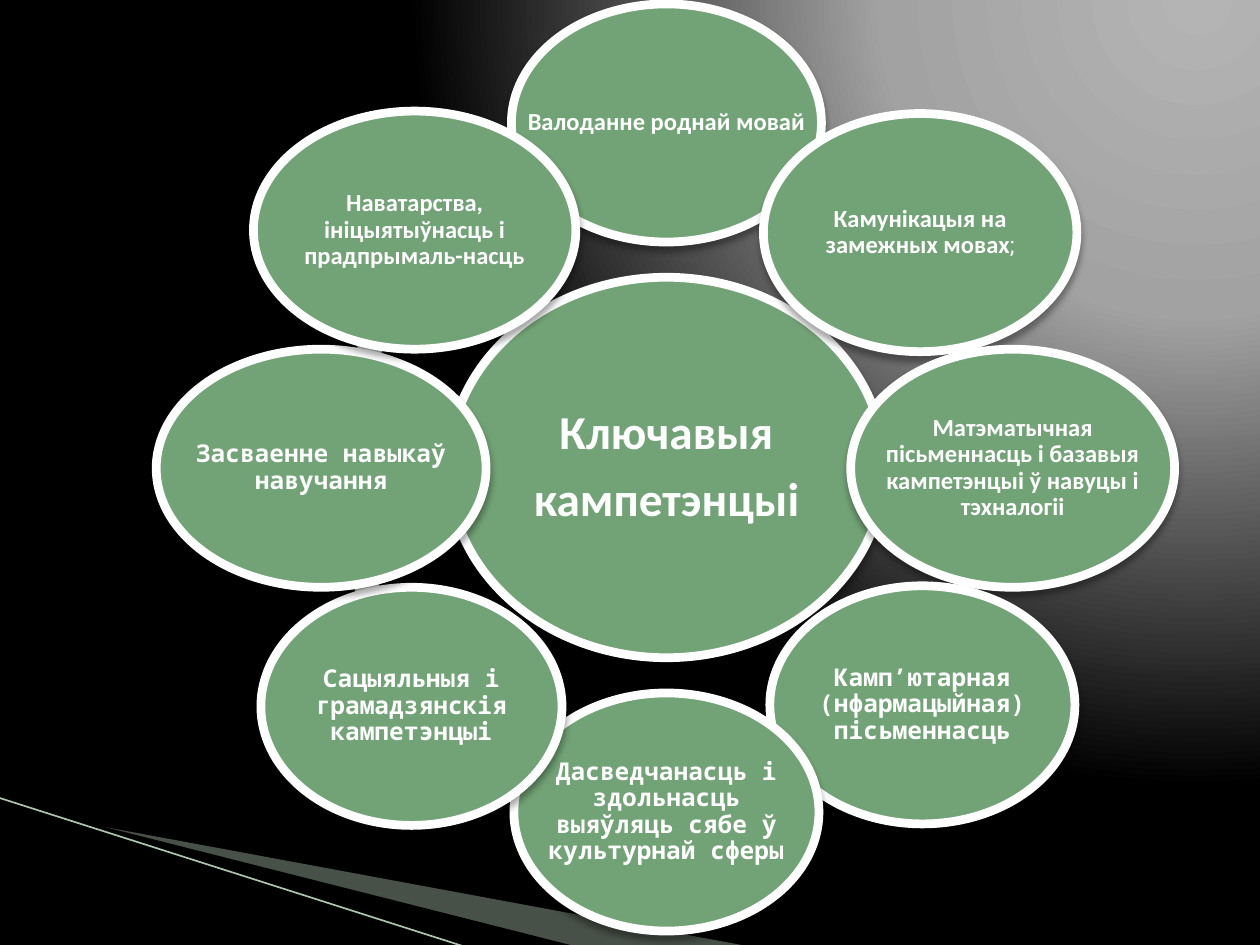
from typing import NamedTuple

from lxml import etree
from pptx import Presentation
from pptx.dml.color import RGBColor
from pptx.enum.shapes import MSO_CONNECTOR, MSO_SHAPE
from pptx.enum.text import MSO_ANCHOR, PP_ALIGN
from pptx.oxml import parse_xml
from pptx.oxml.ns import nsdecls, qn
from pptx.util import Cm, Pt

ELLIPSE, BLOCK_ARC = MSO_SHAPE.OVAL, MSO_SHAPE.BLOCK_ARC
STRAIGHT = MSO_CONNECTOR.STRAIGHT
CENTER, MIDDLE = PP_ALIGN.CENTER, MSO_ANCHOR.MIDDLE

GREEN, PALE_GREEN, WHITE, BLACK = "72A376", "BCCEBD", "FFFFFF", "000000"
SANS, MONO = "Calibri", "Noto Sans Mono"
PETAL_HEIGHT = 4.8
ARC_SIZE = 61.87
ARC_THICKNESS = 0.008


class Bubble(NamedTuple):
    left: float
    top: float
    width: float
    text: str
    font: str = SANS
    height: float = PETAL_HEIGHT
    size: float = 14
    inset: float = 0.28


class Arc(NamedTuple):
    left: float
    top: float
    start: float
    end: float


class Wedge(NamedTuple):
    points: list[tuple[float, float]]
    color: str
    opacity: int


BUBBLES = [
    Bubble(9.04, 5.59, 8.79, "Ключавыя\nкампетэнцыі", height=7.67, size=27, inset=0),
    Bubble(10.31, 0.08, 6.25, "Валоданне роднай мовай"),
    Bubble(15.39, 2.29, 6.32, "Камунікацыя на замежных мовах;"),
    Bubble(17.15, 7.04, 6.53,
           "Матэматычная пісьменнасць і базавыя кампетэнцыі ў навуцы і тэхналогіі"),
    Bubble(15.52, 11.81, 6.15, "Камп’ютарная (нфармацыйная) пісьменнасць", MONO),
    Bubble(10.36, 13.97, 6.15,
           "Дасведчанасць і здольнасць выяўляць сябе ў культурнай сферы", MONO),
    Bubble(5.26, 11.84, 6.07, "Сацыяльныя і грамадзянскія кампетэнцыі", MONO),
    Bubble(3.15, 7.04, 6.65, "Засваенне навыкаў навучання", MONO),
    Bubble(5.11, 2.24, 6.5, "Наватарства, ініцыятыўнасць і прадпрымаль-насць"),
]
ARCS = [
    Arc(-8.03, 0.86, 145.08, 151.25),
    Arc(5.11, -12.75, 117.9, 123.63),
    Arc(5.18, -29.92, 92.73, 98.49),
    Arc(-8.33, -43.99, 64.38, 70.58),
    Arc(-26.77, -43.94, 37.25, 43.5),
    Arc(-40.13, -30.02, 9.64, 15.35),
    Arc(-40.03, -12.65, 200.29, 205.97),
    Arc(-27.08, 0.84, 172.86, 179.09),
]
WEDGES = [
    Wedge([(1.4, 16.54), (15.11, 19.08), (11.58, 19.08), (1.4, 16.51)], "B3CBB5", 40),
    Wedge([(1.35, 16.48), (11.61, 19.08), (9.45, 19.1), (1.37, 16.51)], BLACK, 100),
]


def rgb(color: str) -> RGBColor:
    return RGBColor.from_string(color)


def fill_solid(shape, color: str) -> None:
    shape.fill.solid()
    shape.fill.fore_color.rgb = rgb(color)


def set_background(slide) -> None:
    stops = "".join(
        f'<a:gs pos="{position * 1000}"><a:srgbClr val="{color}"/></a:gs>'
        for position, color in ((0, "B4B4B4"), (40, "A2A2A2"), (100, BLACK)))
    slide.element.cSld.insert(0, parse_xml(
        f'<p:bg {nsdecls("p", "a")}><p:bgPr><a:gradFill rotWithShape="1">'
        f'<a:gsLst>{stops}</a:gsLst><a:path path="circle">'
        '<a:fillToRect l="130000" t="-95000" r="40000" b="218000"/></a:path>'
        '</a:gradFill><a:effectLst/></p:bgPr></p:bg>'))


def add_shadow(shape) -> None:
    shape.shadow.inherit = False
    shape.element.spPr.find(qn("a:effectLst")).append(parse_xml(
        f'<a:outerShdw {nsdecls("a")} blurRad="{Pt(4)}" dist="{Pt(3)}" dir="5400000" '
        f'rotWithShape="0"><a:srgbClr val="{BLACK}"><a:alpha val="35000"/></a:srgbClr>'
        '</a:outerShdw>'))


def add_wedge(slide, wedge: Wedge) -> None:
    points = [(Cm(x), Cm(y)) for x, y in wedge.points]
    builder = slide.shapes.build_freeform(*points[0], scale=1.0)
    builder.add_line_segments(points[1:], close=True)
    shape = builder.convert_to_shape()
    shape.shadow.inherit = False
    shape.line.fill.background()
    fill_solid(shape, wedge.color)
    color = shape.element.spPr.find(qn("a:solidFill")).find(qn("a:srgbClr"))
    etree.SubElement(color, qn("a:alpha")).set("val", str(wedge.opacity * 1000))


def add_accent_line(slide) -> None:
    line = slide.shapes.add_connector(STRAIGHT, Cm(-0.03), Cm(16.08), Cm(9.42), Cm(19.1))
    line.line.color.rgb = rgb("ACC6AE")
    line.line.width = Pt(0.95)
    etree.SubElement(line.element.spPr, qn("a:effectLst"))


def add_arc(slide, arc: Arc) -> None:
    shape = slide.shapes.add_shape(
        BLOCK_ARC, Cm(arc.left), Cm(arc.top), Cm(ARC_SIZE), Cm(ARC_SIZE))
    for index, value in enumerate((arc.start, arc.end, ARC_THICKNESS)):
        shape.adjustments[index] = value
    fill_solid(shape, PALE_GREEN)
    shape.line.fill.background()
    add_shadow(shape)


def add_bubble(slide, bubble: Bubble) -> None:
    """Draw an ellipse and a caption that may use its whole bounding box."""
    box = (Cm(bubble.left), Cm(bubble.top), Cm(bubble.width), Cm(bubble.height))
    ellipse = slide.shapes.add_shape(ELLIPSE, *box)
    fill_solid(ellipse, GREEN)
    ellipse.line.color.rgb = rgb(WHITE)
    ellipse.line.width = Pt(5)
    add_shadow(ellipse)

    frame = slide.shapes.add_textbox(*box).text_frame
    frame.word_wrap = True
    frame.vertical_anchor = MIDDLE
    frame.margin_left = frame.margin_right = Cm(bubble.inset)
    frame.margin_top = frame.margin_bottom = Cm(bubble.inset)
    frame.text = bubble.text.removesuffix(";")
    for paragraph in frame.paragraphs:
        paragraph.alignment = CENTER
        paragraph.line_spacing = 0.9
        paragraph.space_after = Pt(bubble.size * 0.35)
        format_run(paragraph.runs[0], bubble.font, bubble.size, True)
    if bubble.text.endswith(";"):
        semicolon = frame.paragraphs[-1].add_run()
        semicolon.text = ";"
        format_run(semicolon, "Roboto", 13, False)


def format_run(run, font: str, size: float, bold: bool) -> None:
    run.font.name = font
    run.font.size = Pt(size)
    run.font.bold = bold
    run.font.color.rgb = rgb(WHITE)


def main() -> None:
    presentation = Presentation()
    presentation.slide_width, presentation.slide_height = Cm(25.4), Cm(19.05)
    slide = presentation.slides.add_slide(presentation.slide_layouts[6])
    set_background(slide)
    for wedge in WEDGES:
        add_wedge(slide, wedge)
    add_accent_line(slide)
    for arc in ARCS:
        add_arc(slide, arc)
    for bubble in BUBBLES:
        add_bubble(slide, bubble)
    presentation.save("out.pptx")


if __name__ == "__main__":
    main()
